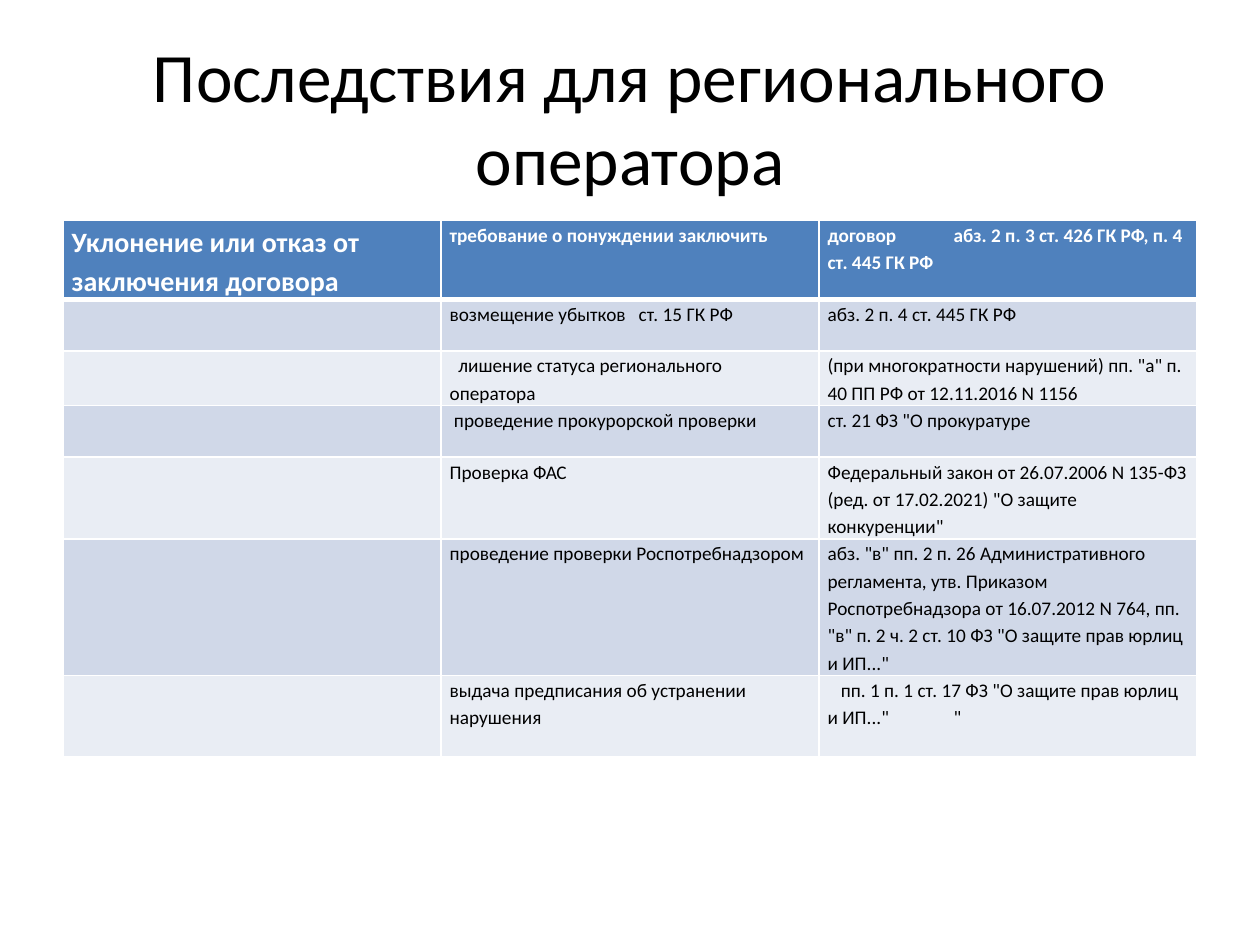
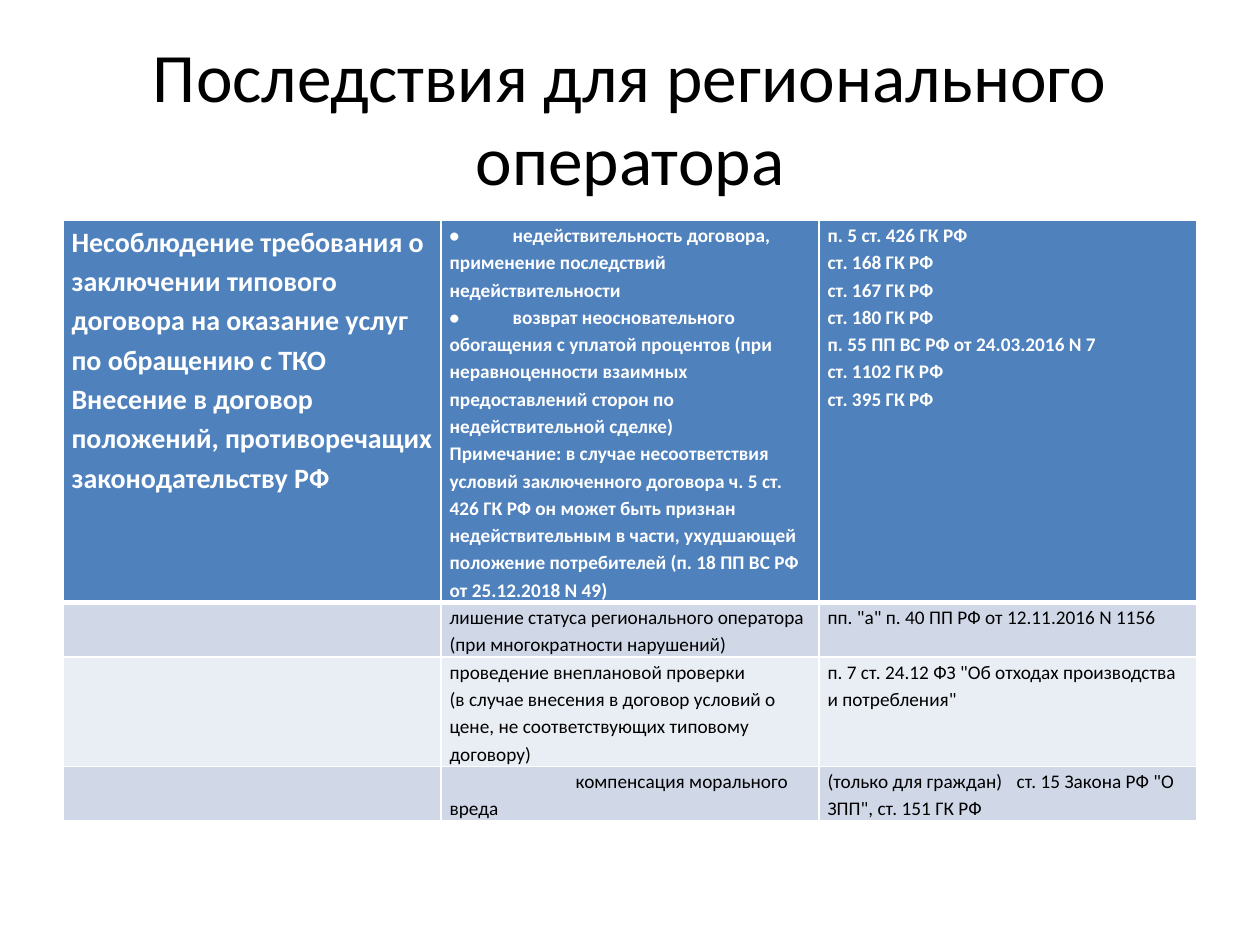
from lxml.etree import SubElement
from pptx import Presentation
from pptx.dml.color import RGBColor
from pptx.enum.text import MSO_ANCHOR as Anchor, MSO_AUTO_SIZE as AutoSize, PP_ALIGN as Align
from pptx.oxml.ns import qn
from pptx.util import Pt

# Shared look
FONT = "Calibri"
BLACK = RGBColor(0x00, 0x00, 0x00)
WHITE = RGBColor(0xFF, 0xFF, 0xFF)
HEADER_BLUE = RGBColor(0x4F, 0x81, 0xBD)
BANDS = (RGBColor(0xD0, 0xD8, 0xE8), RGBColor(0xE9, 0xED, 0xF4))

TITLE = "Последствия для регионального оператора"
TITLE_BOX = (36, 21.6, 648, 90)
TABLE_BOX = (36, 126, 648)
COLUMNS = 3
CELL_MARGIN = 4.95
TAB = 72

# Each row: height, then cells; a cell is its paragraphs and an optional first-line indent
REFUSAL_ROWS = [
    (45, ["Уклонение или отказ от заключения договора"],
     ["требование о понуждении заключить"],
     ["договор\tабз. 2 п. 3 ст. 426 ГК РФ, п. 4 ст. 445 ГК РФ"]),
    (29.5, [], ["возмещение убытков\tст. 15 ГК РФ"], ["абз. 2 п. 4 ст. 445 ГК РФ"]),
    (31, [], (["лишение статуса регионального оператора"], 5),
     ["(при многократности нарушений) пп. \"а\" п. 40 ПП РФ от 12.11.2016 N 1156"]),
    (29.5, [], (["проведение прокурорской проверки"], 2.5), ["ст. 21 ФЗ \"О прокуратуре"]),
    (46.5, [], ["Проверка ФАС"],
     ["Федеральный закон от 26.07.2006 N 135-ФЗ (ред. от 17.02.2021) "
      "\"О защите конкуренции\""]),
    (77.5, [], ["проведение проверки Роспотребнадзором"],
     ["абз. \"в\" пп. 2 п. 26 Административного регламента, утв. Приказом "
      "Роспотребнадзора от 16.07.2012 N 764, пп. \"в\" п. 2 ч. 2 ст. 10 ФЗ "
      "\"О защите прав юрлиц и ИП...\""]),
    (46.5, [], ["выдача предписания об устранении нарушения"],
     (["пп. 1 п. 1 ст. 17 ФЗ \"О защите прав юрлиц и ИП...\"\t\t\""], 7.5)),
]

VIOLATION_ROWS = [
    (217.5,
     ["Несоблюдение требования о заключении типового договора на оказание услуг "
      "по обращению с ТКО",
      "Внесение в договор положений, противоречащих законодательству РФ"],
     ["•\tнедействительность договора, применение последствий недействительности",
      "•\tвозврат неосновательного обогащения с уплатой процентов (при неравноценности "
      "взаимных предоставлений сторон по недействительной сделке)",
      "Примечание: в случае несоответствия условий заключенного договора ч. 5 ст. 426 "
      "ГК РФ он может быть признан недействительным в части, ухудшающей положение "
      "потребителей (п. 18 ПП ВС РФ от 25.12.2018 N 49)"],
     ["п. 5 ст. 426 ГК РФ", "ст. 168 ГК РФ", "ст. 167 ГК РФ", "ст. 180 ГК РФ",
      "п. 55 ПП ВС РФ от 24.03.2016 N 7", "ст. 1102 ГК РФ", "ст. 395 ГК РФ"]),
    (31, [], ["лишение статуса регионального оператора", "(при многократности нарушений)"],
     ["пп. \"а\" п. 40 ПП РФ от 12.11.2016 N 1156"]),
    (62.5, [],
     ["проведение внеплановой проверки",
      "(в случае внесения в договор условий о цене, не соответствующих типовому договору)"],
     ["п. 7 ст. 24.12 ФЗ \"Об отходах производства и потребления\""]),
    (31, [], (["компенсация морального вреда"], TAB),
     ["(только для граждан)\tст. 15 Закона РФ \"О ЗПП\", ст. 151 ГК РФ"]),
]


def write(frame, paragraphs, size, color=BLACK, bold=False, align=Align.LEFT,
          spacing=None, indent=0):
    """Fill a text frame with evenly formatted paragraphs."""
    for index, text in enumerate(paragraphs):
        paragraph = frame.add_paragraph() if index else frame.paragraphs[0]
        paragraph.alignment = align
        paragraph.line_spacing = spacing
        if indent:
            paragraph._p.get_or_add_pPr().set("indent", str(Pt(indent)))
        run = paragraph.add_run()
        run.text = text
        run.font.name = FONT
        run.font.size = Pt(size)
        run.font.bold = bold
        run.font.color.rgb = color


def add_title(slide, box):
    title = slide.shapes.title
    title.left, title.top, title.width, title.height = map(Pt, box)
    frame = title.text_frame
    frame.word_wrap = True
    frame.auto_size = AutoSize.NONE
    frame.vertical_anchor = Anchor.MIDDLE
    write(frame, [TITLE], 39.6, align=Align.CENTER)


def set_borders(cell, top, bottom):
    properties = cell._tc.get_or_add_tcPr()
    for side, width in (("L", 1), ("R", 1), ("T", top), ("B", bottom)):
        line = SubElement(properties, qn(f"a:ln{side}"), w=str(Pt(width)))
        fill = SubElement(line, qn("a:solidFill"))
        SubElement(fill, qn("a:srgbClr"), val=str(WHITE))


def format_cell(cell, content, row, column):
    header = row == 0
    set_borders(cell, top=3 if row == 1 else 1, bottom=3 if header else 1)
    cell.fill.solid()
    cell.fill.fore_color.rgb = HEADER_BLUE if header else BANDS[(row - 1) % 2]
    paragraphs, indent = content if isinstance(content, tuple) else (content, 0)
    if paragraphs:
        cell.margin_left = cell.margin_right = Pt(CELL_MARGIN)
        cell.margin_top = cell.margin_bottom = 0
        write(cell.text_frame, paragraphs, 16 if header and column == 0 else 11,
              color=WHITE if header else BLACK, bold=header, spacing=1.15, indent=indent)


def add_consequences(slide, rows, box):
    left, top, width = box
    height = sum(row[0] for row in rows)
    table = slide.shapes.add_table(len(rows), COLUMNS, Pt(left), Pt(top),
                                   Pt(width), Pt(height)).table
    for column in table.columns:
        column.width = Pt(width / COLUMNS)
    for r, (row_height, *contents) in enumerate(rows):
        table.rows[r].height = Pt(row_height)
        for c, content in enumerate(contents):
            format_cell(table.cell(r, c), content, r, c)


def add_consequences_slide(deck, rows):
    slide = deck.slides.add_slide(deck.slide_layouts.get_by_name("Title Only"))
    add_title(slide, TITLE_BOX)
    add_consequences(slide, rows, TABLE_BOX)


def main():
    deck = Presentation()
    deck.slide_width, deck.slide_height = Pt(720), Pt(540)
    for rows in (REFUSAL_ROWS, VIOLATION_ROWS):
        add_consequences_slide(deck, rows)
    deck.save("out.pptx")


if __name__ == "__main__":
    main()
